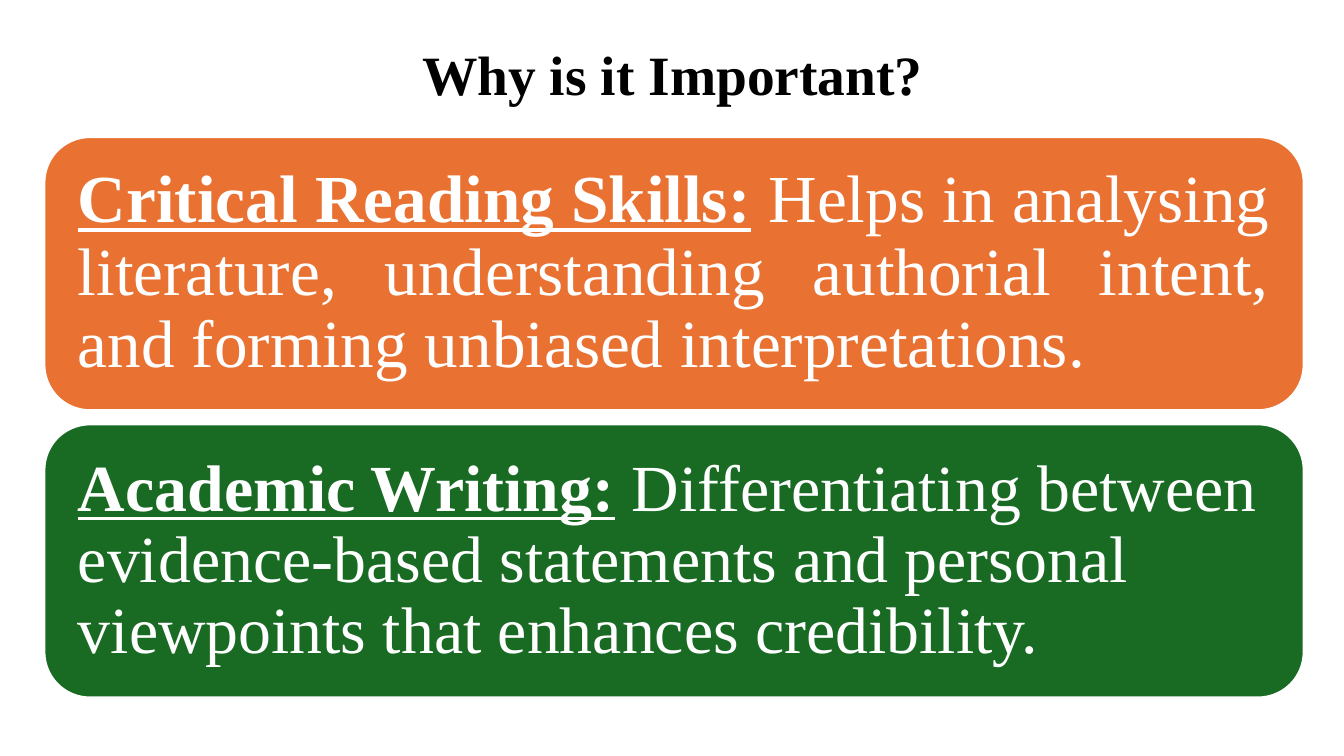
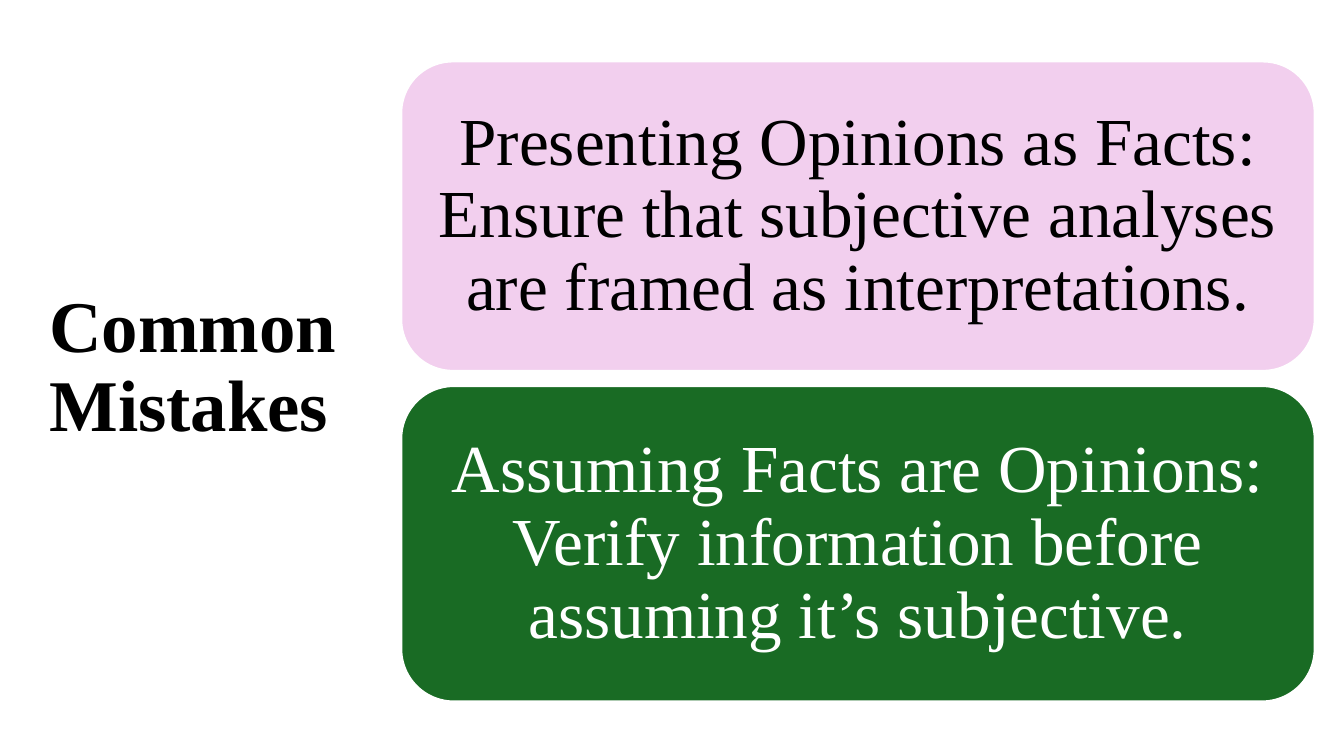
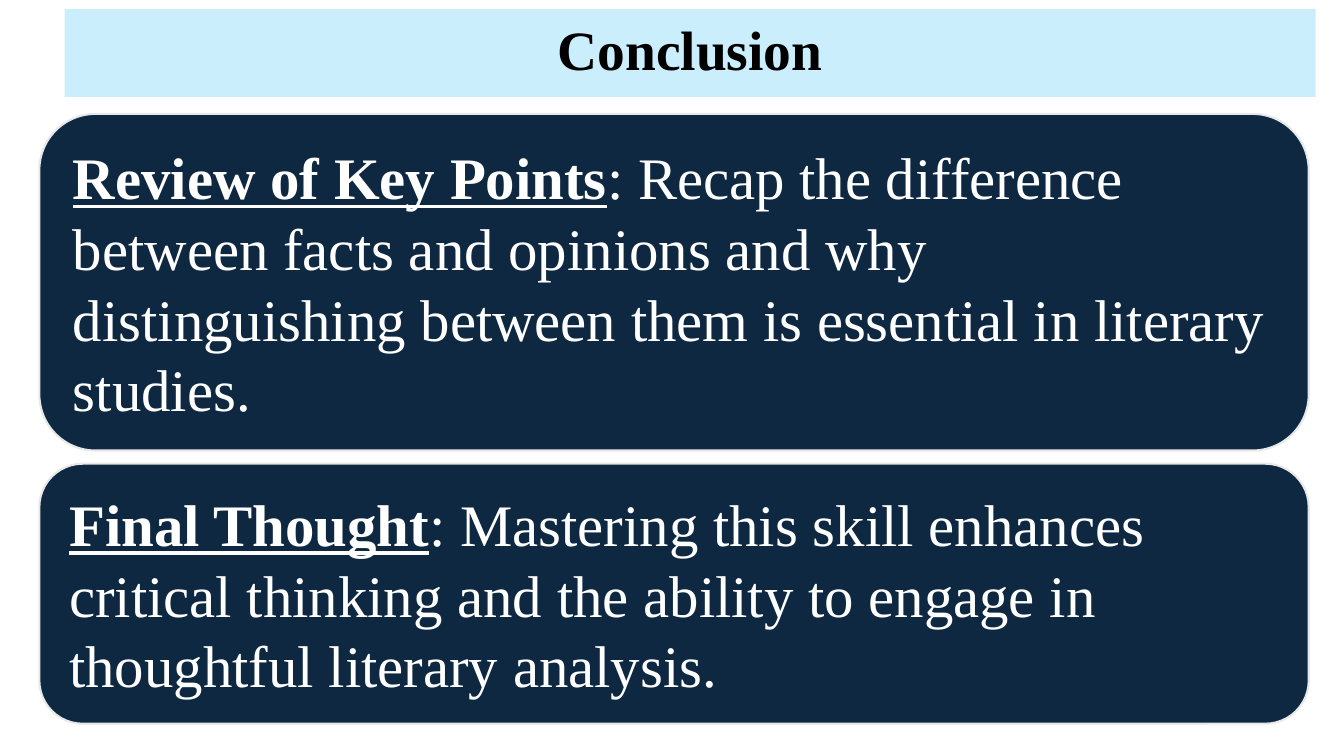
from dataclasses import dataclass

from pptx import Presentation
from pptx.dml.color import RGBColor
from pptx.enum import shapes, text
from pptx.util import Inches, Pt

ALIGN = text.PP_ALIGN


@dataclass(frozen=True)
class Theme:
    font: str = "Times New Roman"
    black: str = "000000"
    white: str = "FFFFFF"
    orange: str = "E97132"
    green: str = "196B24"
    pink: str = "F2CFEE"
    navy: str = "0E2841"
    pale_blue: str = "CAEEFB"
    pale_grey: str = "E8E8E8"
    title_size: float = 39.6
    side_title_size: float = 52
    body_size: float = 48
    writing_size: float = 47
    conclusion_size: float = 42
    outline: float = 1.5
    tight: float = 0.9


THEME = Theme()


def rgb(value):
    return RGBColor.from_string(value)


def apply(target, **values):
    for name, value in values.items():
        setattr(target, name, value)


def add_run(paragraph, words, size, colour, **emphasis):
    run = paragraph.add_run()
    run.text = words
    apply(run.font, name=THEME.font, size=Pt(size), **emphasis)
    run.font.color.rgb = rgb(colour)


def titled_slide(deck, words, box, size=THEME.title_size,
                 align=ALIGN.CENTER, band=None):
    slide = deck.slides.add_slide(deck.slide_layouts[5])
    title = slide.shapes.title
    left, top, width, height = map(Inches, box)
    apply(title, left=left, top=top, width=width, height=height)
    if band:
        title.fill.solid()
        title.fill.fore_color.rgb = rgb(band)
    apply(title.text_frame, word_wrap=True, auto_size=text.MSO_AUTO_SIZE.NONE,
          vertical_anchor=text.MSO_ANCHOR.MIDDLE)
    paragraph = title.text_frame.paragraphs[0]
    apply(paragraph, alignment=align, line_spacing=THEME.tight)
    add_run(paragraph, words, size, THEME.black, bold=True)
    return slide


def add_card(slide, box, fill, body, lead="", size=THEME.body_size,
             colour=THEME.white, outline=THEME.white, align=ALIGN.LEFT,
             spacing=THEME.tight, inset=0.2):
    """Rounded card whose text may open with a bold underlined lead."""
    card = slide.shapes.add_shape(
        shapes.MSO_SHAPE.ROUNDED_RECTANGLE, *map(Inches, box))
    card.shadow.inherit = False
    card.fill.solid()
    card.fill.fore_color.rgb = rgb(fill)
    card.line.color.rgb = rgb(outline)
    card.line.width = Pt(THEME.outline)
    margin = Inches(inset)
    apply(card.text_frame, word_wrap=True,
          vertical_anchor=text.MSO_ANCHOR.MIDDLE,
          margin_left=margin, margin_right=margin,
          margin_top=margin, margin_bottom=margin)
    paragraph = card.text_frame.paragraphs[0]
    apply(paragraph, alignment=align, line_spacing=spacing)
    if lead:
        add_run(paragraph, lead, size, colour, bold=True, underline=True)
    add_run(paragraph, body, size, colour)


def add_card_stack(slide, origin, width, gap, cards, **shared):
    """Cards of given heights, placed one below another from origin."""
    left, top = origin
    for height, card in cards:
        add_card(slide, (left, top, width, height), **shared, **card)
        top += height + gap


def importance_slide(deck):
    slide = titled_slide(deck, "Why is it Important?", (0.92, 0.38, 11.5, 0.78))
    add_card_stack(slide, (0.44, 1.36), 12.49, 0.14, [
        (2.71, dict(
            fill=THEME.orange, align=ALIGN.JUSTIFY,
            lead="Critical Reading Skills:",
            body=" Helps in analysing literature, understanding authorial "
                 "intent, and forming unbiased interpretations.")),
        (2.71, dict(
            fill=THEME.green, size=THEME.writing_size,
            lead="Academic Writing:",
            body=" Differentiating between evidence-based statements and "
                 "personal viewpoints that enhances credibility.")),
    ])


def mistakes_slide(deck):
    slide = titled_slide(deck, "Common Mistakes", (0.39, 0.61, 3.2, 6.09),
                         size=THEME.side_title_size, align=ALIGN.LEFT)
    add_card_stack(slide, (3.98, 0.61), 9.06, 0.15, [
        (3.07, dict(
            fill=THEME.pink, colour=THEME.black,
            body="Presenting Opinions as Facts: Ensure that subjective "
                 "analyses are framed as interpretations.")),
        (3.13, dict(
            fill=THEME.green,
            body="Assuming Facts are Opinions: Verify information before "
                 "assuming it’s subjective.")),
    ], align=ALIGN.CENTER)


def conclusion_slide(deck):
    slide = titled_slide(deck, "Conclusion", (0.64, 0.09, 12.41, 0.87),
                         band=THEME.pale_blue)
    add_card_stack(slide, (0.39, 1.13), 12.59, 0.13, [
        (3.34, dict(
            lead="Review of Key Points",
            body=": Recap the difference between facts and opinions and why "
                 "distinguishing between them is essential in literary "
                 "studies.")),
        (2.58, dict(
            lead="Final Thought",
            body=": Mastering this skill enhances critical thinking and the "
                 "ability to engage in thoughtful literary analysis.")),
    ], fill=THEME.navy, outline=THEME.pale_grey, spacing=1.0, inset=0.17,
        size=THEME.conclusion_size)


def main():
    deck = Presentation()
    apply(deck, slide_width=Inches(13.33), slide_height=Inches(7.5))
    for build in (importance_slide, mistakes_slide, conclusion_slide):
        build(deck)
    deck.save("out.pptx")


if __name__ == "__main__":
    main()
